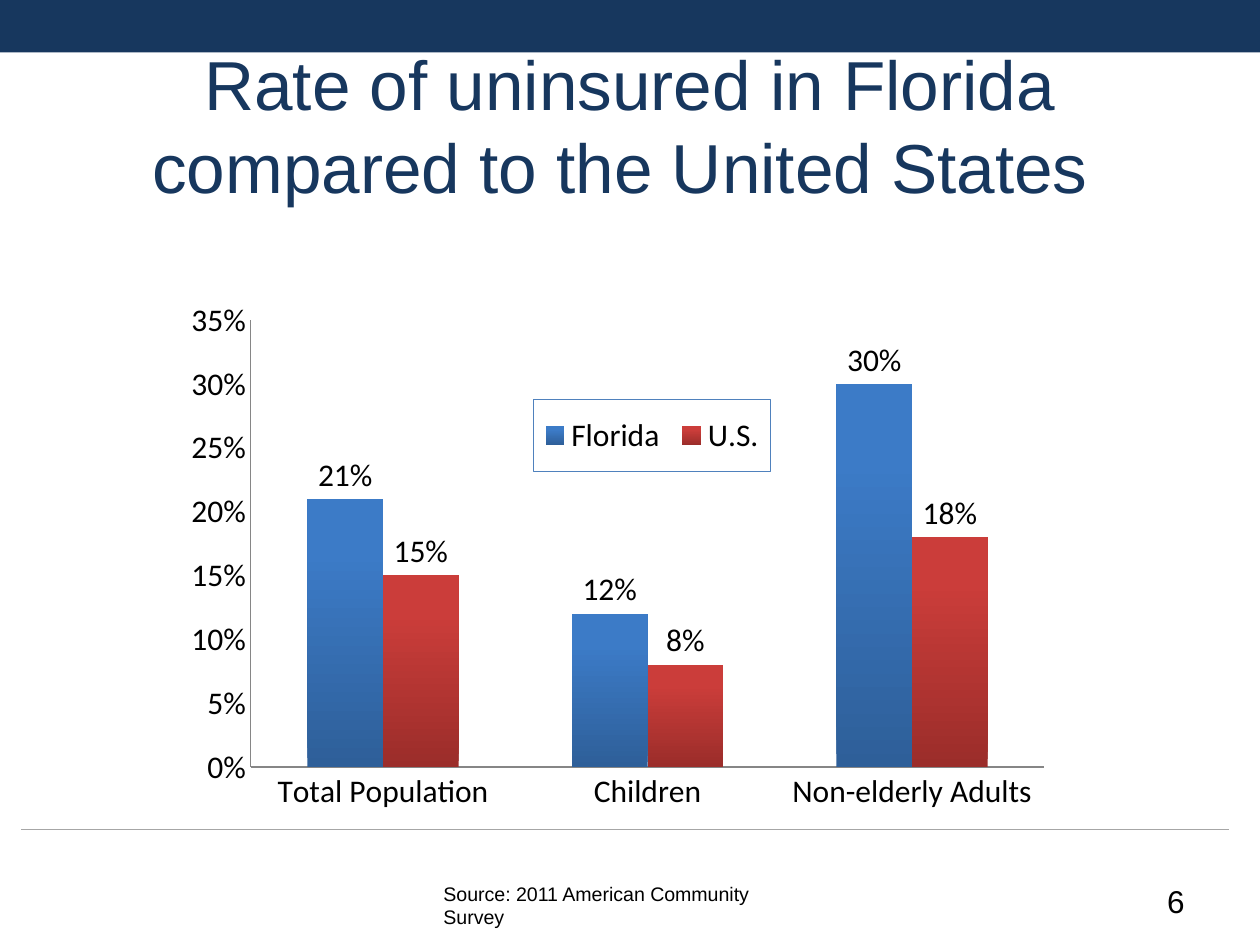
from pptx import Presentation
from pptx.chart.data import CategoryChartData
from pptx.dml.color import RGBColor
from pptx.enum.chart import XL_CHART_TYPE, XL_LABEL_POSITION, XL_LEGEND_POSITION, XL_TICK_MARK
from pptx.enum.shapes import MSO_CONNECTOR, MSO_SHAPE
from pptx.enum.text import MSO_ANCHOR, PP_ALIGN
from pptx.oxml import parse_xml
from pptx.oxml.ns import nsdecls, qn
from pptx.util import Cm, Pt

COLUMNS = XL_CHART_TYPE.COLUMN_CLUSTERED
OUTSIDE_END = XL_LABEL_POSITION.OUTSIDE_END
LEGEND_RIGHT = XL_LEGEND_POSITION.RIGHT
NO_TICKS = XL_TICK_MARK.NONE
STRAIGHT = MSO_CONNECTOR.STRAIGHT
RECTANGLE = MSO_SHAPE.RECTANGLE
MIDDLE = MSO_ANCHOR.MIDDLE
LEFT, CENTER, RIGHT = PP_ALIGN.LEFT, PP_ALIGN.CENTER, PP_ALIGN.RIGHT

NAVY, BLACK, GREY, AXIS_GREY = "17375E", "000000", "A6A6A6", "868686"
TITLE_ONLY = 5


def color(hex_string):
    return RGBColor.from_string(hex_string)


def set_layout(element, index, x, y, width, height, target=""):
    """Give a chart part a manual place, in fractions of the chart."""
    for old_layout in element.findall(qn("c:layout")):
        element.remove(old_layout)
    element.insert(index, parse_xml(
        f'<c:layout {nsdecls("c")}><c:manualLayout>{target}'
        '<c:xMode val="edge"/><c:yMode val="edge"/>'
        f'<c:x val="{x}"/><c:y val="{y}"/><c:w val="{width}"/><c:h val="{height}"/>'
        '</c:manualLayout></c:layout>'))


deck = Presentation()
deck.slide_width, deck.slide_height = Cm(25.4), Cm(19.05)
slide = deck.slides.add_slide(deck.slide_layouts[TITLE_ONLY])
shapes = slide.shapes

# Header band and footer rule
band = shapes.add_shape(RECTANGLE, 0, 0, deck.slide_width, Cm(1.06))
band.shadow.inherit = False
band.fill.solid()
band.fill.fore_color.rgb = color(NAVY)
band.line.fill.background()

rule = shapes.add_connector(STRAIGHT, Cm(0.43), Cm(16.72), Cm(24.77), Cm(16.72))
rule.line.color.rgb = color(GREY)
rule.line.width = Pt(0.75)
rule._element.spPr.append(parse_xml(f'<a:effectLst {nsdecls("a")}/>'))

# Title
title = shapes.title
title.left, title.top, title.width, title.height = Cm(1.27), Cm(1.06), Cm(22.86), Cm(2.88)
title.text_frame.text = "Rate of uninsured in Florida compared to the United States "
title.text_frame.vertical_anchor = MIDDLE
para = title.text_frame.paragraphs[0]
para.alignment = CENTER
font = para.runs[0].font
font.name, font.size = "Arial", Pt(39.6)
font.color.rgb = color(NAVY)

# Chart
chart_data = CategoryChartData(number_format="0%")
chart_data.categories = ["Total Population", "Children", "Non-elderly Adults"]
chart_data.add_series("Florida", [0.21, 0.12, 0.3])
chart_data.add_series("U.S.", [0.15, 0.08, 0.18])
chart = shapes.add_chart(COLUMNS, Cm(3.6), Cm(4.44), Cm(18.2), Cm(12.06), chart_data).chart
chart.has_title = False
chart.font.name, chart.font.size = "Calibri", Pt(18)
chart.font.color.rgb = color(BLACK)
set_layout(chart._chartSpace.chart.plotArea, 0, 0.08, 0.167, 0.879, 0.747,
           '<c:layoutTarget val="inner"/>')

# Columns, shaded from bottom to top
plot = chart.plots[0]
plot.gap_width, plot.overlap = 150, 0
plot.vary_by_categories = False
for series, shades in zip(plot.series, [("2E5F99", "3C7BC7"), ("9B2D2A", "CB3D3A")]):
    fill = series.format.fill
    fill.gradient()
    fill.gradient_angle = 90
    for stop, shade, position in zip(fill.gradient_stops, shades, (0, 0.8)):
        stop.color.rgb = color(shade)
        stop.position = position
    labels = series.data_labels
    labels.show_value = True
    labels.number_format, labels.number_format_is_linked = "0%", False
    labels.position = OUTSIDE_END

# Axes
for axis in (chart.category_axis, chart.value_axis):
    axis.major_tick_mark = axis.minor_tick_mark = NO_TICKS
    axis.has_major_gridlines = False
    axis.format.line.color.rgb = color(AXIS_GREY)
    axis.format.line.width = Pt(0.75)
value_axis = chart.value_axis
value_axis.minimum_scale, value_axis.maximum_scale, value_axis.major_unit = 0, 0.35, 0.05
value_axis.tick_labels.number_format = "0%"
value_axis.tick_labels.number_format_is_linked = False

# Framed legend between the columns
chart.has_legend = True
legend = chart.legend
legend.position = LEGEND_RIGHT
legend.include_in_layout = False
set_layout(legend._element, 1, 0.393, 0.3, 0.263, 0.12)
legend._element.find(qn("c:overlay")).addnext(parse_xml(
    f'<c:spPr {nsdecls("c", "a")}><a:ln w="9525"><a:solidFill>'
    '<a:srgbClr val="4F81BD"/></a:solidFill></a:ln></c:spPr>'))

# Source and page number
for left, width, right_margin, text, size, alignment in [
    (8.69, 8.05, 0.5, "Source: 2011 American Community Survey", 11.2, LEFT),
    (18.21, 5.92, 0.25, "6", 18, RIGHT),
]:
    box = shapes.add_textbox(Cm(left), Cm(17.65), Cm(width), Cm(1.02))
    box.text_frame.word_wrap = True
    box.text_frame.margin_right = Cm(right_margin)
    box.text_frame.text = text
    para = box.text_frame.paragraphs[0]
    para.alignment = alignment
    font = para.runs[0].font
    font.name, font.size = "Arial", Pt(size)
    font.color.rgb = color(BLACK)

deck.save("out.pptx")
